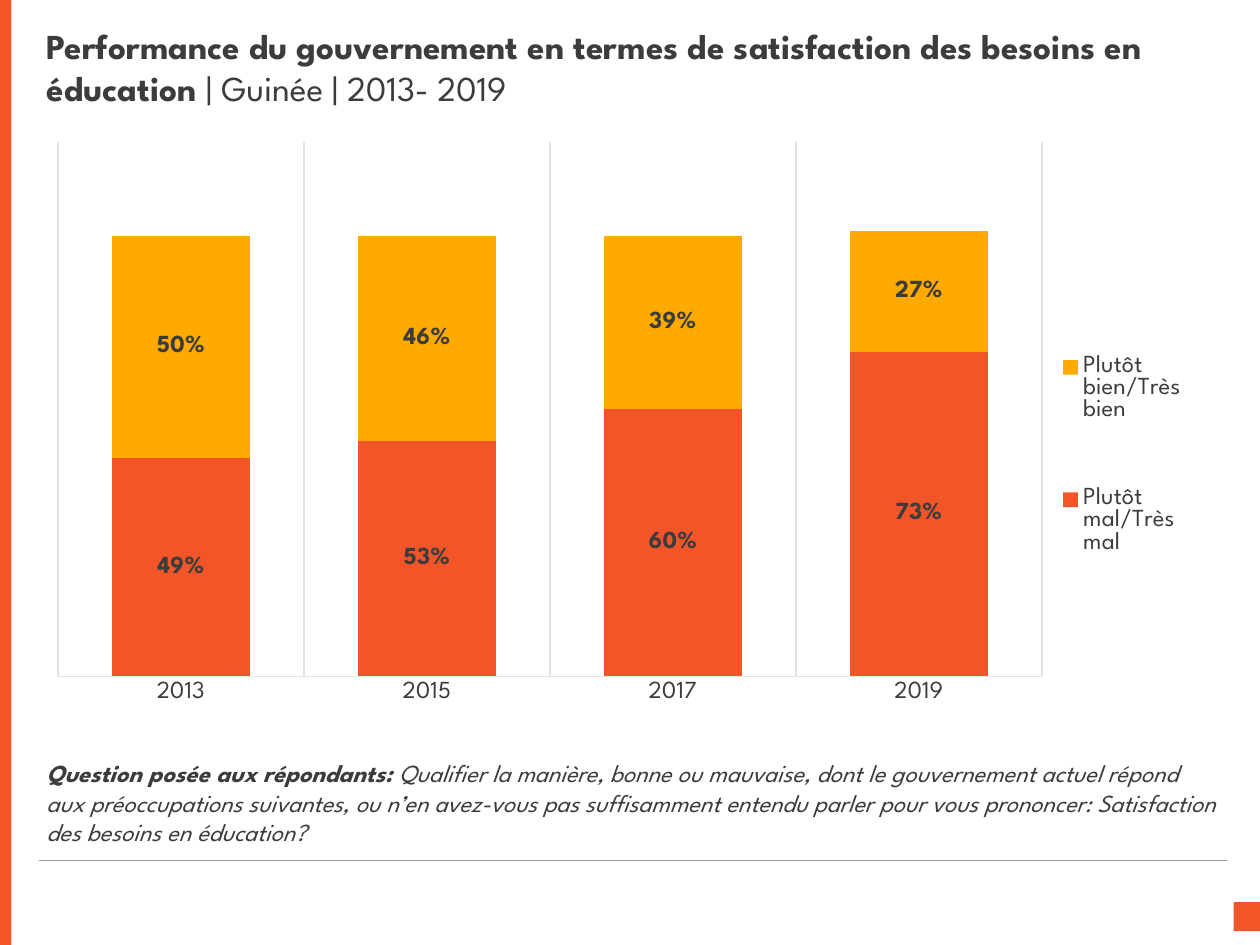
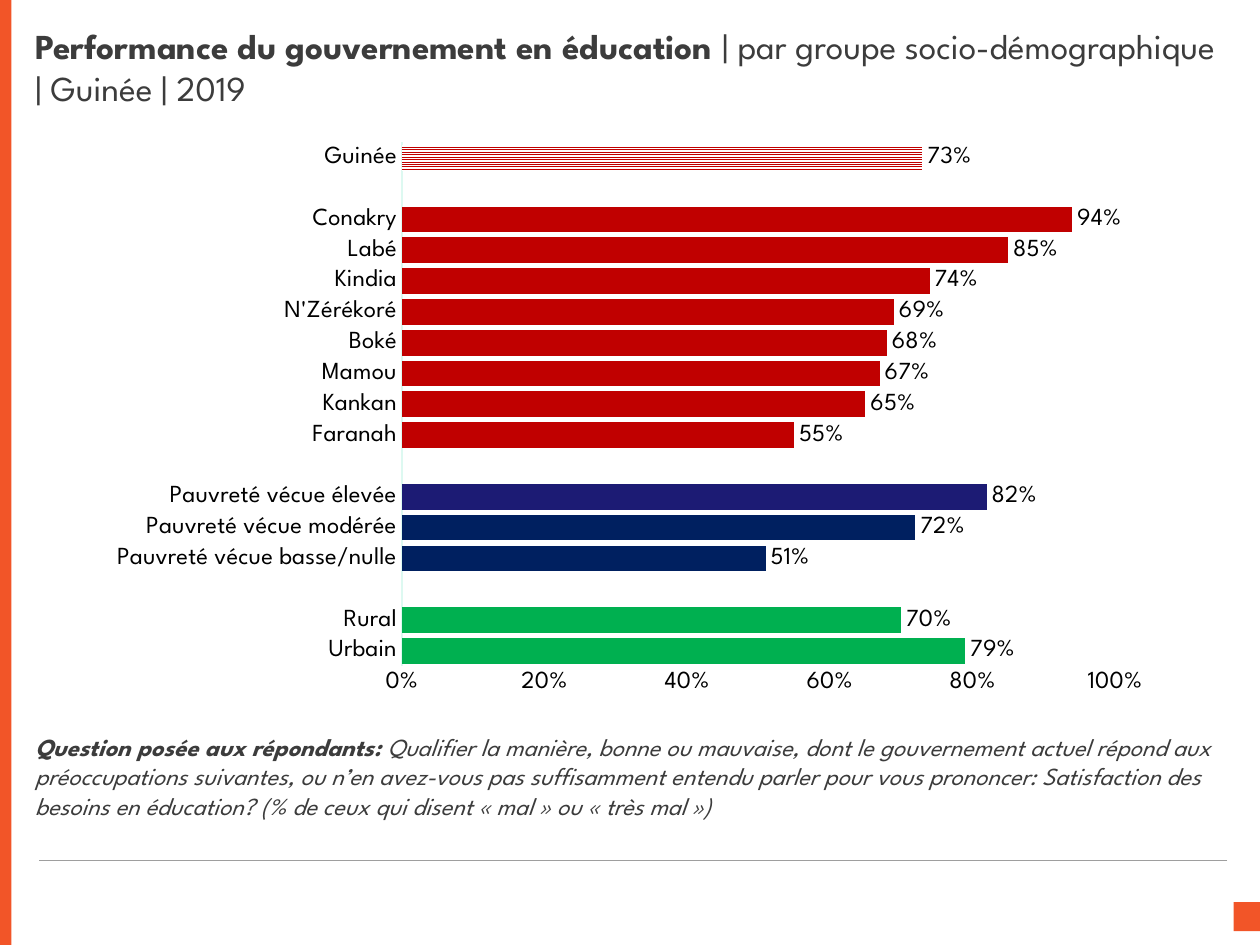
import pptx
import pptx.util
import pptx.chart.data
import pptx.dml.color
import pptx.enum.chart
import pptx.enum.dml
import pptx.enum.shapes
import pptx.enum.text
import pptx.oxml
import pptx.oxml.ns

SCALE = 9144  # EMU in one px, 100 px to the inch
FACE = "League Spartan"
ORANGE, GOLD, INK = "F25528", "FFAA00", "3C3C3C"
RED, NAVY, INDIGO, GREEN = "C00000", "002060", "1C1B74", "00B050"
KIND = pptx.enum.chart.XL_CHART_TYPE
SPOT = pptx.enum.chart.XL_LABEL_POSITION
ASK = "Question posée aux répondants: "
QUERY = ("Qualifier la manière, bonne ou mauvaise, dont le gouvernement actuel "
         "répond aux préoccupations suivantes, ou n’en avez-vous pas suffisamment "
         "entendu parler pour vous prononcer: Satisfaction des besoins en éducation?")


def px(*nums):
    return [pptx.util.Emu(n * SCALE) for n in nums]


def tint(code):
    return pptx.dml.color.RGBColor.from_string(code)


def style(font, size=14, color=INK, bold=False, slant=False):
    font.name, font.size = FACE, pptx.util.Pt(size)
    font.bold, font.italic = bold, slant
    font.color.rgb = tint(color)


def write(para, text, **form):
    run = para.add_run()
    run.text = text
    style(run.font, **form)


def place(part, frame, box, inner=False):
    """Fix a chart part at a slide box, as shares of the chart frame."""
    vals = {"x": (box[0] - frame[0]) / frame[2], "y": (box[1] - frame[1]) / frame[3],
            "w": box[2] / frame[2], "h": box[3] / frame[3]}
    tags = '<c:layoutTarget val="inner"/>' if inner else ""
    tags += '<c:xMode val="edge"/><c:yMode val="edge"/>'
    tags += "".join(f'<c:{key} val="{val:.4f}"/>' for key, val in vals.items())
    space = pptx.oxml.ns.nsdecls("c")
    node = pptx.oxml.parse_xml(
        f"<c:layout {space}><c:manualLayout>{tags}</c:manualLayout></c:layout>")
    for old in part.findall(pptx.oxml.ns.qn("c:layout")):
        part.remove(old)
    if inner:
        part.insert(0, node)
    else:
        part.find(pptx.oxml.ns.qn("c:legendPos")).addnext(node)


class Deck:
    def __init__(self):
        self.file = pptx.Presentation()
        self.file.slide_width, self.file.slide_height = px(1000, 750)

    def page(self, box, bold, plain):
        self.slide = self.file.slides.add_slide(self.file.slide_layouts[5])
        self.block(0, 0, 9, 750)
        self.block(979, 716, 22, 23)
        self.rule(974, 683, 31, 683)
        self.fill(self.slide.shapes.title, box, bold, plain, size=20)

    def block(self, *box):
        shape = self.slide.shapes.add_shape(
            pptx.enum.shapes.MSO_SHAPE.RECTANGLE, *px(*box))
        shape.shadow.inherit = False
        shape.fill.solid()
        shape.fill.fore_color.rgb = tint(ORANGE)
        shape.line.fill.background()

    def rule(self, *ends):
        line = self.slide.shapes.add_connector(
            pptx.enum.shapes.MSO_CONNECTOR.STRAIGHT, *px(*ends))
        line.line.color.rgb = tint("9E9E9E")
        line.line.width = pptx.util.Pt(0.25)
        props = line._element.spPr
        props.append(props.makeelement(pptx.oxml.ns.qn("a:effectLst"), {}))

    def fill(self, shape, box, bold, plain, **form):
        shape.left, shape.top, shape.width, shape.height = px(*box)
        frame = shape.text_frame
        frame.word_wrap = True
        frame.auto_size = pptx.enum.text.MSO_AUTO_SIZE.NONE
        if shape.is_placeholder:
            frame.vertical_anchor = pptx.enum.text.MSO_ANCHOR.MIDDLE
        para = frame.paragraphs[0]
        para.alignment = pptx.enum.text.PP_ALIGN.LEFT
        write(para, bold, bold=True, **form)
        write(para, plain, **form)

    def note(self, box, plain):
        shape = self.slide.shapes.add_textbox(*px(*box))
        self.fill(shape, box, ASK, plain, slant=True)

    def chart(self, kind, box, area, cats, rows, gap, top, edge, spot, color, bold=False):
        data = pptx.chart.data.CategoryChartData(number_format="0%")
        data.categories = cats
        for name, vals, _ in rows:
            data.add_series(name, vals)
        chart = self.slide.shapes.add_chart(kind, *px(*box), data).chart
        style(chart.font, color=color)
        chart.has_title = chart.has_legend = False
        place(chart._chartSpace.chart.plotArea, box, area, inner=True)

        # Bars and their labels
        plot = chart.plots[0]
        plot.gap_width, plot.vary_by_categories = gap, False
        for bars, (_, _, shade) in zip(plot.series, rows):
            bars.format.fill.solid()
            bars.format.fill.fore_color.rgb = tint(shade)
            bars.invert_if_negative = False
            tags = bars.data_labels
            tags.show_value, tags.position = True, spot
            tags.number_format, tags.number_format_is_linked = "0%", False
            style(tags.font, color=color, bold=bold)

        # Axes
        none = pptx.enum.chart.XL_TICK_MARK.NONE
        for axis in (chart.category_axis, chart.value_axis):
            axis.major_tick_mark = axis.minor_tick_mark = none
            axis.has_major_gridlines = False
            style(axis.tick_labels.font, color=color)
        line = chart.category_axis.format.line
        line.color.rgb, line.width = tint(edge), pptx.util.Pt(0.75)
        scale = chart.value_axis
        scale.minimum_scale, scale.maximum_scale, scale.major_unit = 0, top, 0.2
        scale.format.line.fill.background()
        scale.tick_labels.number_format = "0%"
        scale.tick_labels.number_format_is_linked = False
        return chart


def trend(deck):
    deck.page((27, 14, 958, 78),
              "Performance du gouvernement en termes de satisfaction des besoins en éducation ",
              "| Guinée | 2013- 2019")
    deck.note((27, 597, 951, 77), QUERY)
    box = (27, 105, 951, 464)
    rows = [("Plutôt mal/Très mal", (0.49, 0.53, 0.6, 0.73), ORANGE),
            ("Plutôt bien/Très bien", (0.5, 0.46, 0.39, 0.27), GOLD)]
    chart = deck.chart(KIND.COLUMN_STACKED, box, (46, 113, 781, 424),
                       ["2013", "2015", "2017", "2019"], rows, gap=79, top=1.2,
                       edge="E2E2E2", spot=SPOT.CENTER, color=INK, bold=True)
    chart.plots[0].overlap = 100
    chart.value_axis.visible = False
    years = chart.category_axis
    years.has_major_gridlines = True
    grid = years.major_gridlines.format.line
    grid.color.rgb, grid.width = tint("E2E2E2"), pptx.util.Pt(0.75)

    # Legend
    chart.has_legend = True
    chart.legend.position = pptx.enum.chart.XL_LEGEND_POSITION.RIGHT
    chart.legend.include_in_layout = False
    style(chart.legend.font)
    place(chart.legend._element, box, (838, 230, 105, 262))


def groups(deck):
    deck.page((18, 14, 965, 78), "Performance du gouvernement en éducation ",
              "| par groupe socio-démographique | Guinée | 2019")
    deck.note((18, 576, 965, 99),
              QUERY + " (% de ceux qui disent « mal » ou « très mal »)")
    gap = ("", None, None)
    bars = [("Urbain", 0.79, GREEN), ("Rural", 0.7, GREEN), gap,
            ("Pauvreté vécue basse/nulle", 0.51, NAVY),
            ("Pauvreté vécue modérée", 0.72, NAVY),
            ("Pauvreté vécue élevée", 0.82, INDIGO), gap,
            ("Faranah", 0.55, RED), ("Kankan", 0.65, RED), ("Mamou", 0.67, RED),
            ("Boké", 0.68, RED), ("N'Zérékoré", 0.69, RED), ("Kindia", 0.74, RED),
            ("Labé", 0.85, RED), ("Conakry", 0.94, RED), gap, ("Guinée", 0.73, RED)]
    cats, vals, shades = zip(*bars)
    chart = deck.chart(KIND.BAR_CLUSTERED, (76, 106, 848, 456), (319, 113, 566, 416),
                       cats, [("Series 1", vals, RED)], gap=20, top=1,
                       edge="DDF9F1", spot=SPOT.OUTSIDE_END, color="000000")
    points = chart.plots[0].series[0].points
    for spot, shade in enumerate(shades):
        if shade not in (None, RED):
            fill = points[spot].format.fill
            fill.solid()
            fill.fore_color.rgb = tint(shade)

    # Striped bar for the whole country
    fill = points[len(bars) - 1].format.fill
    fill.patterned()
    fill.pattern = pptx.enum.dml.MSO_PATTERN.NARROW_HORIZONTAL
    fill.fore_color.rgb, fill.back_color.rgb = tint(RED), tint("FFFFFF")


def main():
    deck = Deck()
    trend(deck)
    groups(deck)
    deck.file.save("out.pptx")


if __name__ == "__main__":
    main()
